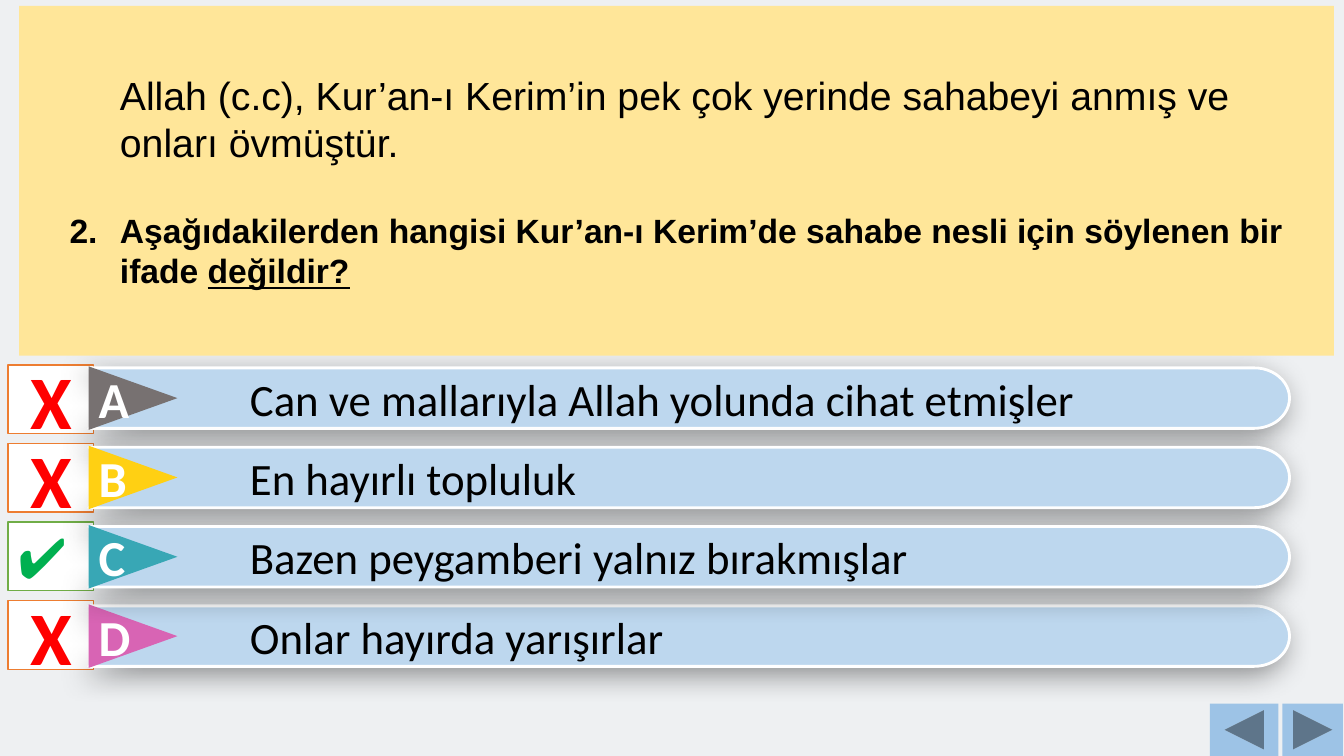
from math import cos, pi, sin

from lxml import etree
from pptx import Presentation
from pptx.dml.color import RGBColor
from pptx.enum.shapes import MSO_SHAPE
from pptx.enum.text import MSO_ANCHOR, PP_ALIGN
from pptx.oxml import parse_xml
from pptx.oxml.ns import nsdecls, qn
from pptx.util import Emu, Inches, Pt

RECTANGLE = MSO_SHAPE.RECTANGLE
TRIANGLE = MSO_SHAPE.ISOSCELES_TRIANGLE
BACK = MSO_SHAPE.ACTION_BUTTON_BACK_OR_PREVIOUS
FORWARD = MSO_SHAPE.ACTION_BUTTON_FORWARD_OR_NEXT
MIDDLE = MSO_ANCHOR.MIDDLE
LEFT, CENTER = PP_ALIGN.LEFT, PP_ALIGN.CENTER

COLORS = {
    "background": "EEF0F2", "question": "FFE699", "bar": "BDD7EE",
    "button": "9DC3E6", "white": "FFFFFF", "black": "000000",
    "right": "00B050", "right line": "70AD47",
    "wrong": "FF0000", "wrong line": "ED7D31",
    "A": "777171", "B": "FFD013", "C": "38A7B5", "D": "D864B4",
}
ANSWERS = {
    "A": "Can ve mallarıyla Allah yolunda cihat etmişler",
    "B": "En hayırlı topluluk",
    "C": "Bazen peygamberi yalnız bırakmışlar",
    "D": "Onlar hayırda yarışırlar",
}
CORRECT = "C"
STACKING = "ABDC"

MARK_TOP, MARK_STEP = 3.62, 0.78
BAR_TOP, BAR_STEP = 3.65, 0.787
BAR_LEFT, BAR_RIGHT, BAR_HEIGHT = 0.88, 12.79, 0.6
CAP_WIDTH, ARC_STEPS = 0.35, 24
ARROW_WIDTH, ARROW_LENGTH = 0.63, 0.88


def paint(shape, fill, line=None, line_width=1):
    shape.shadow.inherit = False
    shape.fill.solid()
    shape.fill.fore_color.rgb = RGBColor.from_string(COLORS[fill])
    if line:
        shape.line.color.rgb = RGBColor.from_string(COLORS[line])
        shape.line.width = Pt(line_width)
    else:
        shape.line.fill.background()


def write(paragraph, text, size, color, font="Calibri", bold=False, align=LEFT):
    paragraph.add_run().text = text
    paragraph.alignment = align
    paragraph.font.name = font
    paragraph.font.size = Pt(size)
    paragraph.font.bold = bold
    paragraph.font.color.rgb = RGBColor.from_string(COLORS[color])


presentation = Presentation()
presentation.slide_width = Inches(13.33)
presentation.slide_height = Inches(7.5)
slide = presentation.slides.add_slide(presentation.slide_layouts[6])
slide.background.fill.solid()
slide.background.fill.fore_color.rgb = RGBColor.from_string(COLORS["background"])

# Right and wrong marks
for row, letter in enumerate(ANSWERS):
    mark = slide.shapes.add_shape(RECTANGLE, Inches(0.08), Inches(MARK_TOP + row * MARK_STEP),
                                  Inches(0.85), Inches(0.68))
    mark.text_frame.vertical_anchor = MIDDLE
    paragraph = mark.text_frame.paragraphs[0]
    if letter == CORRECT:
        paint(mark, "white", "right line")
        write(paragraph, "✔", 40, "right")
    else:
        paint(mark, "white", "wrong line")
        write(paragraph, "X", 54, "wrong", bold=True, align=CENTER)

# Answer bars, each with its lettered arrow
for letter in STACKING:
    top = BAR_TOP + list(ANSWERS).index(letter) * BAR_STEP
    half = BAR_HEIGHT / 2
    middle = top + half
    angles = [pi * step / ARC_STEPS - pi / 2 for step in range(ARC_STEPS + 1)]
    outline = [(BAR_RIGHT - CAP_WIDTH * (1 - cos(angle)), middle + half * sin(angle))
               for angle in angles]
    outline += [(BAR_LEFT, top + BAR_HEIGHT), (BAR_LEFT + half * 2, middle)]

    group = slide.shapes.add_group_shape()
    builder = group.shapes.build_freeform(Inches(BAR_LEFT), Inches(top))
    builder.add_line_segments([(Inches(x), Inches(y)) for x, y in outline], close=True)
    bar = builder.convert_to_shape()
    paint(bar, "bar", "white", 2)
    effects = bar._element.spPr.find(qn("a:effectLst"))
    effects.append(parse_xml(
        f'<a:outerShdw {nsdecls("a")} blurRad="{Pt(20)}" dist="{Pt(7)}" dir="8100000" '
        f'algn="tr" rotWithShape="0"><a:srgbClr val="{COLORS["black"]}">'
        '<a:alpha val="40000"/></a:srgbClr></a:outerShdw>'))
    bar.text_frame.word_wrap = True
    bar.text_frame.vertical_anchor = MIDDLE
    paragraph = bar.text_frame.paragraphs[0]
    write(paragraph, ANSWERS[letter], 32, "black")
    paragraph.level = 3
    paragraph._p.get_or_add_pPr().set("marL", str(Inches(1.5)))
    paragraph._p.get_or_add_pPr().set("indent", "0")

    arrow = group.shapes.add_shape(
        TRIANGLE, Inches(BAR_LEFT + (ARROW_LENGTH - ARROW_WIDTH) / 2),
        Inches(middle - ARROW_LENGTH / 2), Inches(ARROW_WIDTH), Inches(ARROW_LENGTH))
    arrow.rotation = 90
    paint(arrow, letter)
    arrow.text_frame.vertical_anchor = MIDDLE
    arrow.text_frame._txBody.bodyPr.set("vert", "vert270")
    write(arrow.text_frame.paragraphs[0], letter, 36, "white", bold=True, align=CENTER)

# Question panel
panel = slide.shapes.add_shape(RECTANGLE, Inches(0.19), Inches(0.06), Inches(13.04), Inches(3.47))
paint(panel, "question")
frame = panel.text_frame
frame.vertical_anchor = MIDDLE
frame.margin_left = frame.margin_right = frame.margin_top = frame.margin_bottom = Emu(0)
statement, question = frame.paragraphs[0], frame.add_paragraph()
write(statement, "Allah (c.c), Kur’an-ı Kerim’in pek çok yerinde sahabeyi anmış ve onları övmüştür.",
      28, "black", "Arial")
write(question, "Aşağıdakilerden hangisi Kur’an-ı Kerim’de sahabe nesli için söylenen bir ifade ",
      24, "black", "Arial", bold=True)
emphasis = question.add_run()
emphasis.text = "değildir?"
emphasis.font.underline = True
statement.level, question.level = 2, 1
question.space_before = Pt(32)
for paragraph, indent in ((statement, 0), (question, -0.5)):
    properties = paragraph._p.get_or_add_pPr()
    properties.set("marL", str(Inches(1)))
    properties.set("indent", str(Inches(indent)))
numbering = etree.Element(qn("a:buAutoNum"), type="arabicPeriod", startAt="2")
question._p.pPr.find(qn("a:defRPr")).addprevious(numbering)

# Navigation buttons
for kind, left, width in ((BACK, 12, 0.68), (FORWARD, 12.72, 0.6)):
    button = slide.shapes.add_shape(kind, Inches(left), Inches(6.98), Inches(width), Inches(0.52))
    paint(button, "button")

presentation.save("out.pptx")
